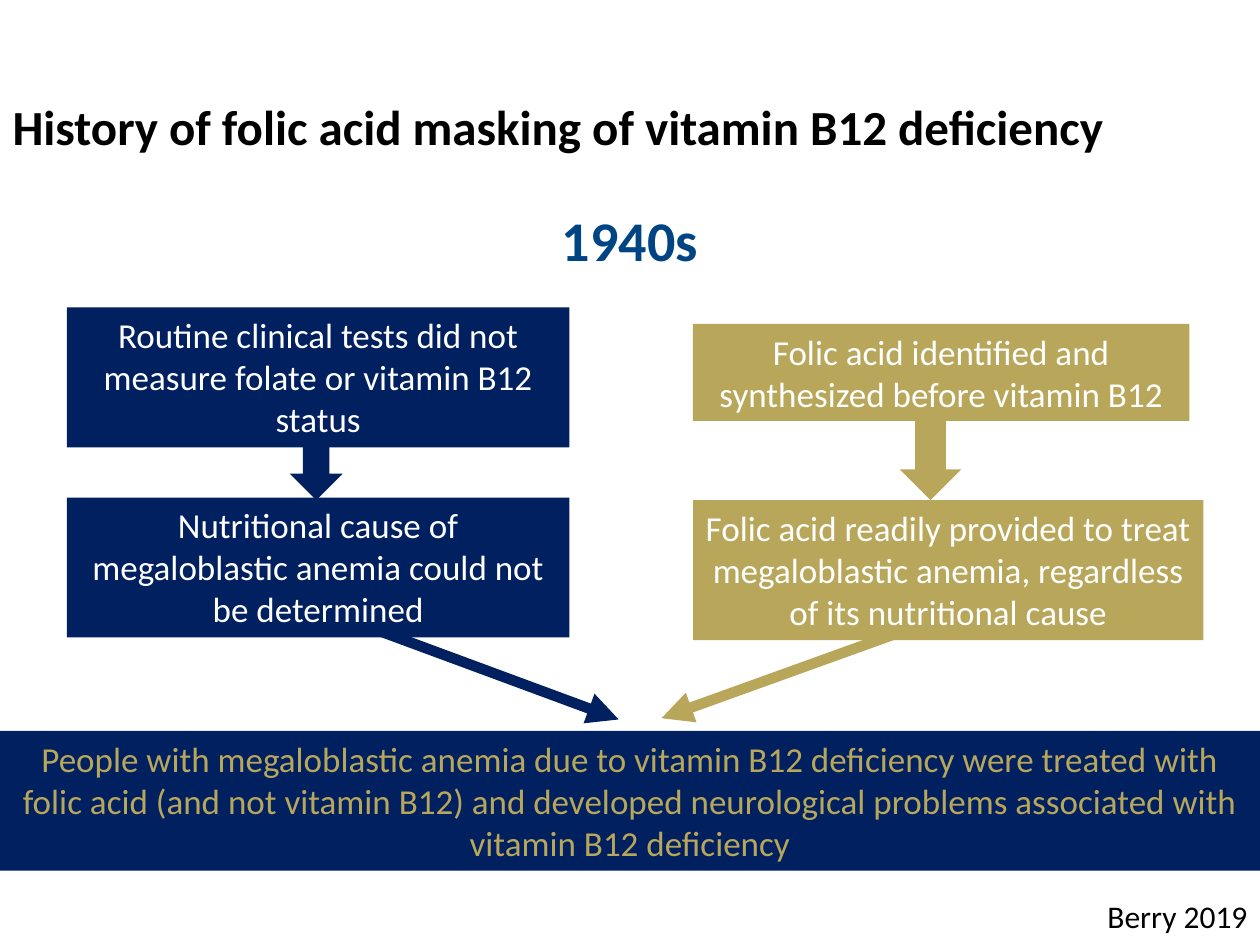
"""Build a slide on how folic acid masked vitamin B12 deficiency."""
from dataclasses import dataclass

from lxml import etree
from pptx import Presentation
from pptx import util as u
from pptx.dml.color import RGBColor
from pptx.enum import shapes, text
from pptx.oxml.ns import qn

PX = 9144
HUES = {"navy": "002060", "gold": "B8A75A", "blue": "004484",
        "white": "FFFFFF", "black": "000000"}
ALIGN = text.PP_ALIGN
FORM = shapes.MSO_SHAPE


@dataclass(frozen=True)
class Area:
    left: int
    top: int
    width: int
    height: int

    def emu(self) -> list[int]:
        return [n * PX for n in (self.left, self.top, self.width, self.height)]


@dataclass(frozen=True)
class Box:
    area: Area
    fill: str
    words: str
    ink: str = "white"


@dataclass(frozen=True)
class Drop:
    area: Area
    fill: str


@dataclass(frozen=True)
class Link:
    start: tuple[int, int]
    end: tuple[int, int]
    hue: str


LINKS = [
    Link((747, 490), (525, 570), "gold"),
    Link((272, 490), (491, 571), "navy"),
]
DROPS = [
    Drop(Area(714, 317, 49, 80), "gold"),
    Drop(Area(230, 338, 42, 59), "navy"),
]
BOXES = [
    Box(Area(53, 244, 399, 111), "navy",
        "Routine clinical tests did not measure folate or vitamin B12 status"),
    Box(Area(550, 257, 394, 77), "gold",
        "Folic acid identified and synthesized before vitamin B12"),
    Box(Area(0, 580, 1000, 111), "navy",
        "People with megaloblastic anemia due to vitamin B12 deficiency were "
        "treated with folic acid (and not vitamin B12) and developed "
        "neurological problems associated with vitamin B12 deficiency", "gold"),
    Box(Area(53, 395, 399, 111), "navy",
        "Nutritional cause of megaloblastic anemia could not be determined"),
    Box(Area(550, 397, 405, 111), "gold",
        "Folic acid readily provided to treat megaloblastic anemia, "
        "regardless of its nutritional cause"),
]


def tint(name: str) -> RGBColor:
    return RGBColor.from_string(HUES[name])


def write(shape, words: str, *, size: int, ink: str, bold: bool = False,
          align=ALIGN.CENTER, anchor=text.MSO_ANCHOR.TOP,
          fit=text.MSO_AUTO_SIZE.SHAPE_TO_FIT_TEXT, lead: float | None = None) -> None:
    frame = shape.text_frame
    frame.word_wrap = True
    frame.auto_size = fit
    frame.vertical_anchor = anchor
    para = frame.paragraphs[0]
    para.alignment = align
    para.line_spacing = lead
    run = para.add_run()
    run.text = words
    font = run.font
    font.name, font.size, font.bold = "Calibri", u.Pt(size), bold
    font.color.rgb = tint(ink)


def block(slide, form, area: Area, fill: str):
    shape = slide.shapes.add_shape(form, *area.emu())
    shape.shadow.inherit = False
    shape.fill.solid()
    shape.fill.fore_color.rgb = tint(fill)
    shape.line.fill.background()
    return shape


def join(slide, link: Link) -> None:
    ends = [n * PX for n in link.start + link.end]
    line = slide.shapes.add_connector(shapes.MSO_CONNECTOR.STRAIGHT, *ends)
    line.line.color.rgb = tint(link.hue)
    line.line.width = u.Pt(6)
    etree.SubElement(line.line._get_or_add_ln(), qn("a:tailEnd"), type="triangle")
    etree.SubElement(line._element.spPr, qn("a:effectLst"))


def main() -> None:
    deck = Presentation()
    deck.slide_width, deck.slide_height = 1000 * PX, 750 * PX
    slide = deck.slides.add_slide(deck.slide_layouts[5])

    title = slide.shapes.title
    title.left, title.top, title.width, title.height = Area(0, 30, 1000, 145).emu()
    write(title, "History of folic acid masking of vitamin B12 deficiency",
          size=28, ink="black", bold=True, align=ALIGN.LEFT, lead=0.9,
          anchor=text.MSO_ANCHOR.MIDDLE, fit=text.MSO_AUTO_SIZE.NONE)

    for link in LINKS:
        join(slide, link)
    for drop in DROPS:
        block(slide, FORM.DOWN_ARROW, drop.area, drop.fill)

    source = slide.shapes.add_textbox(*Area(525, 707, 475, 40).emu())
    write(source, "Berry 2019", size=18, ink="black", align=ALIGN.RIGHT)
    era = slide.shapes.add_textbox(*Area(0, 158, 1000, 64).emu())
    write(era, "1940s", size=32, ink="blue", bold=True)

    for box in BOXES:
        shape = block(slide, FORM.RECTANGLE, box.area, box.fill)
        write(shape, box.words, size=20, ink=box.ink)

    deck.save("out.pptx")


if __name__ == "__main__":
    main()
